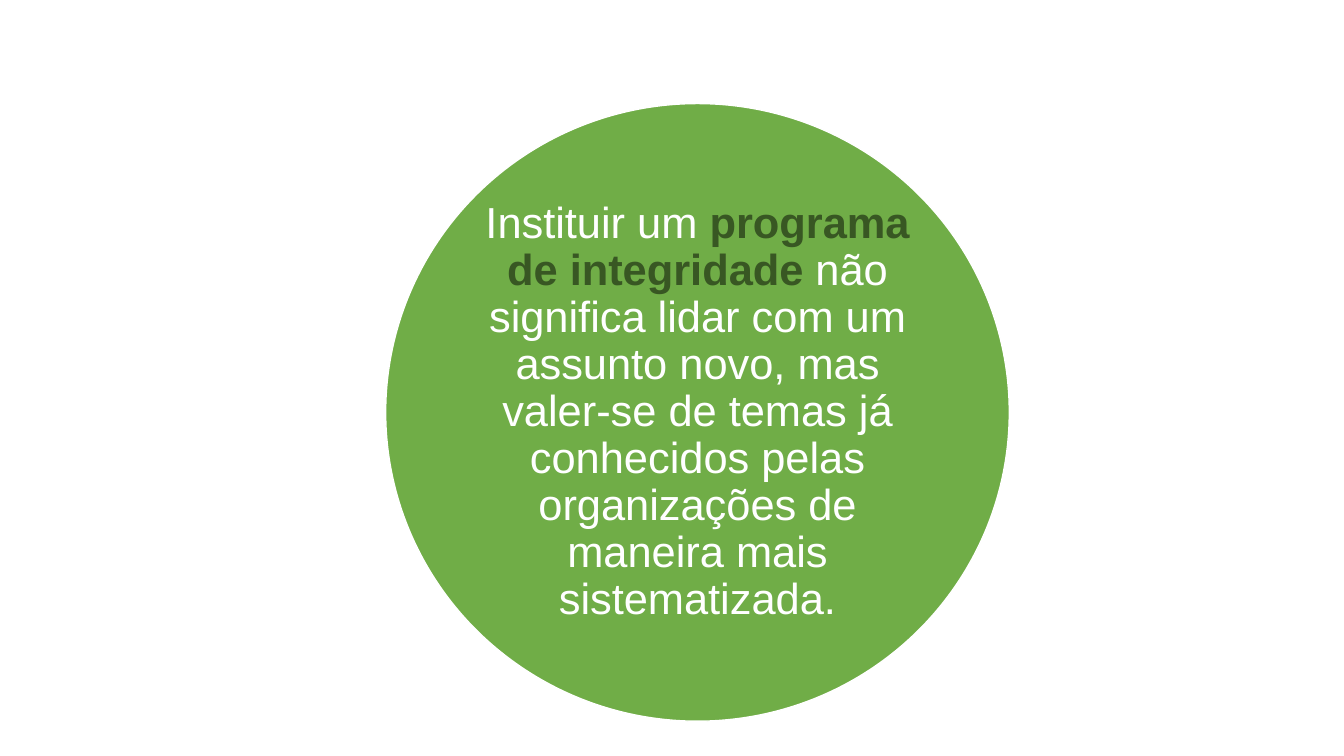
from pptx import Presentation
from pptx import util as u
from pptx.dml.color import RGBColor
from pptx.enum import shapes, text

COLORS = {"green": "70AD47", "dark": "385723", "white": "FFFFFF"}


class Deck:
    font = "Arial"
    size = 31
    inset = 0.04

    def __init__(self, wide, high):
        self.prs = Presentation()
        self.prs.slide_width = u.Inches(wide)
        self.prs.slide_height = u.Inches(high)
        self.slide = self.prs.slides.add_slide(self.prs.slide_layouts[6])

    def color(self, name):
        return RGBColor.from_string(COLORS[name])

    def place(self, left, top, width, height):
        """Turn percentages of the slide's size into lengths."""
        wide, high = self.prs.slide_width, self.prs.slide_height
        return [round(share * full / 100) for share, full in
                ((left, wide), (top, high), (width, wide), (height, high))]

    def circle(self, box, runs):
        """Draw a filled circle with centred text; runs are (text, color, bold)."""
        disc = self.slide.shapes.add_shape(
            shapes.MSO_SHAPE.OVAL, *self.place(*box))
        disc.shadow.inherit = False
        disc.fill.solid()
        disc.fill.fore_color.rgb = self.color("green")
        disc.line.color.rgb = self.color("white")
        disc.line.width = u.Pt(1)

        frame = disc.text_frame
        frame.word_wrap = True
        frame.vertical_anchor = text.MSO_ANCHOR.MIDDLE
        frame.margin_left = frame.margin_right = u.Inches(self.inset)
        frame.margin_top = frame.margin_bottom = u.Inches(self.inset)

        para = frame.paragraphs[0]
        para.alignment = text.PP_ALIGN.CENTER
        para.line_spacing = 0.9
        para.font.name = self.font
        para.font.size = u.Pt(self.size)
        for words, color, bold in runs:
            run = para.add_run()
            run.text = words
            run.font.name = self.font
            run.font.size = u.Pt(self.size)
            run.font.bold = bold
            run.font.color.rgb = self.color(color)


def main():
    deck = Deck(13.33, 7.5)
    deck.circle((28.7, 13.7, 46.4, 81.7), [
        ("Instituir um ", "white", False),
        ("programa de integridade ", "dark", True),
        ("não significa lidar com um assunto novo, mas valer-se de temas "
         "já conhecidos pelas organizações de maneira mais sistematizada.",
         "white", False),
    ])
    deck.prs.save("out.pptx")


if __name__ == "__main__":
    main()
